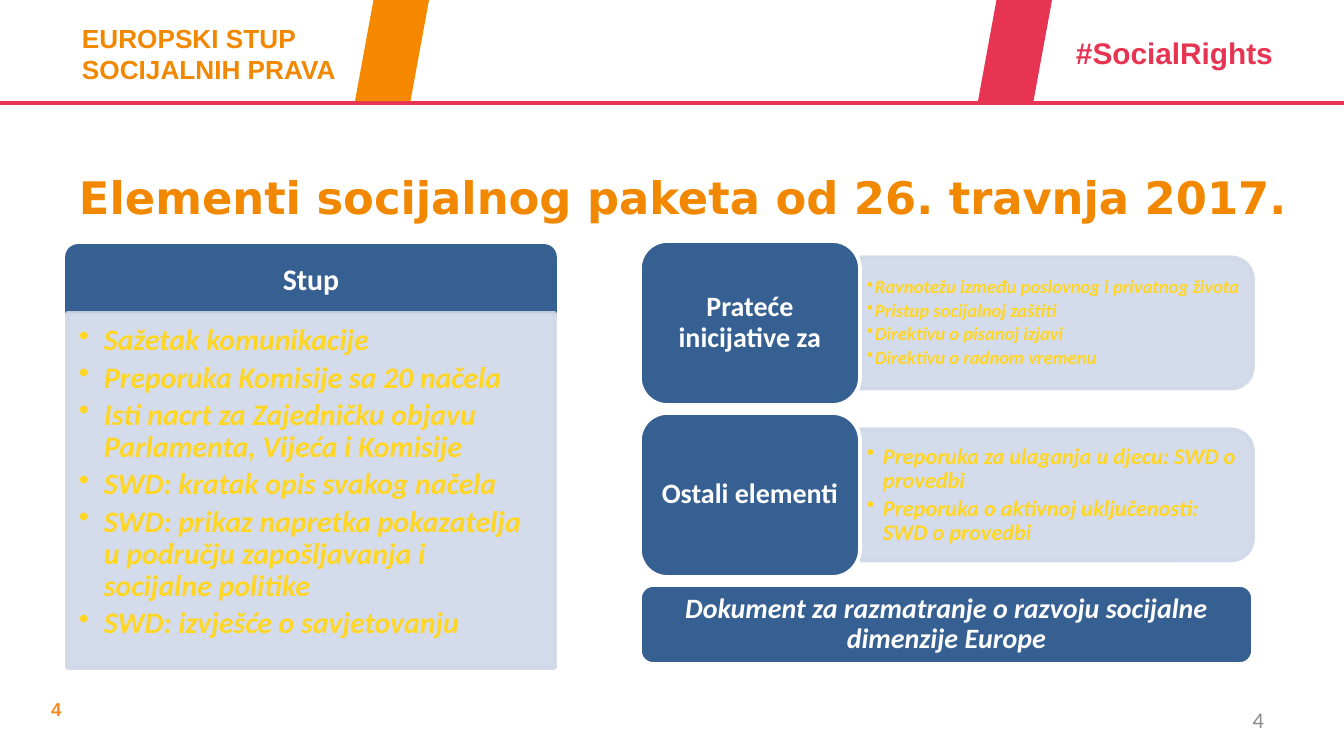
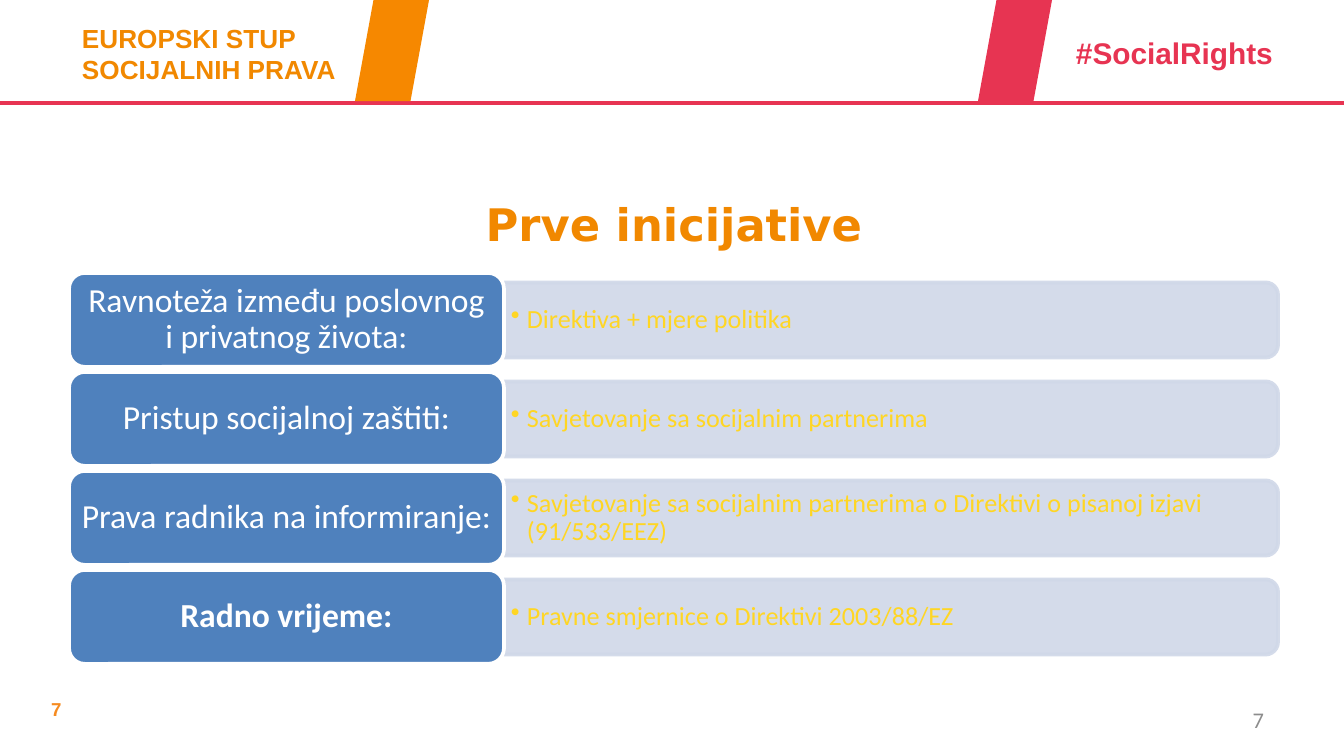
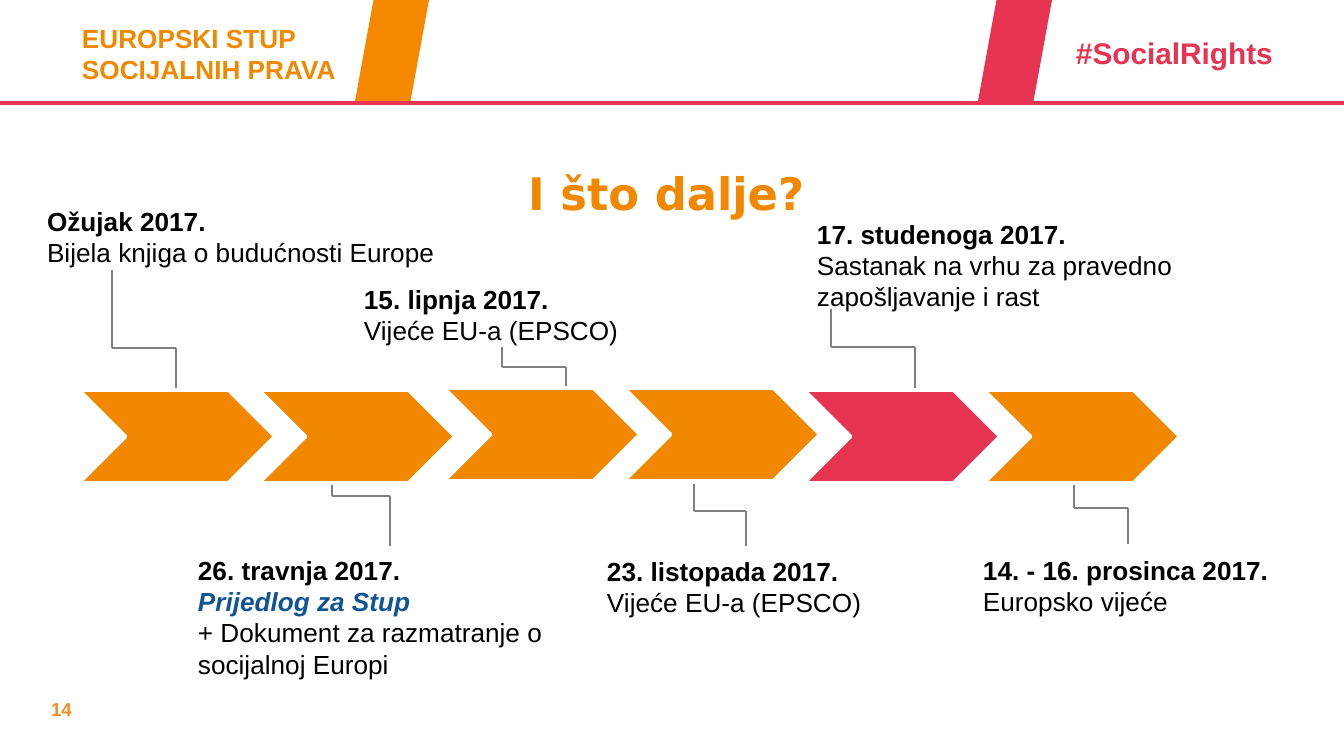
"""Builds three slides on the social package, its first initiatives and the timeline ahead."""
from itertools import pairwise

from lxml.etree import SubElement
from pptx import Presentation
from pptx.dml.color import RGBColor
from pptx.enum.shapes import MSO_CONNECTOR, MSO_SHAPE
from pptx.enum.text import MSO_ANCHOR, PP_ALIGN
from pptx.oxml.ns import qn
from pptx.util import Emu, Pt

PX = 914400 / 134.4
ORANGE, BAND_ORANGE, RED = "F18800", "F68800", "E73452"
NAVY, BLUE, PANEL, YELLOW = "376092", "4F81BD", "D0D8E8", "FFD624"
WHITE, BLACK, GREY = "FFFFFF", "000000", "808080"

HEADER_TEXTS = [
    ("EUROPSKI STUP\vSOCIJALNIH PRAVA", (69, 15, 341, 77), 14, ORANGE),
    ("#SocialRights", (1063, 28, 233, 50), 16, RED),
]
HEADER_BANDS = [(355, BAND_ORANGE), (978, RED)]

PILLAR_TITLE = "Stup"
PILLAR_ITEMS = [
    "Sažetak komunikacije",
    "Preporuka Komisije sa 20 načela",
    "Isti nacrt za Zajedničku objavu Parlamenta, Vijeća i Komisije",
    "SWD: kratak opis svakog načela",
    "SWD: prikaz napretka pokazatelja u području zapošljavanja i socijalne politike",
    "SWD: izvješće o savjetovanju",
]
PACKAGE_ROWS = [
    ("Prateće inicijative za", 10, 8, [
        "Ravnotežu između poslovnog i privatnog života",
        "Pristup socijalnoj zaštiti",
        "Direktivu o pisanoj izjavi",
        "Direktivu o radnom vremenu",
    ]),
    ("Ostali elementi", 12, 16, [
        "Preporuka za ulaganja u djecu: SWD o provedbi",
        "Preporuka o aktivnoj uključenosti: SWD o provedbi",
    ]),
]
REFLECTION_PAPER = "Dokument za razmatranje o razvoju socijalne dimenzije Europe"

INITIATIVES = [
    ("Ravnoteža između poslovnog i privatnog života:", "Direktiva + mjere politika", False),
    ("Pristup socijalnoj zaštiti:", "Savjetovanje sa socijalnim partnerima", False),
    ("Prava radnika na informiranje:",
     "Savjetovanje sa socijalnim partnerima o Direktivi o pisanoj izjavi (91/533/EEZ)", False),
    ("Radno vrijeme:", "Pravne smjernice o Direktivi 2003/88/EZ", True),
]

PROPOSAL = "Prijedlog za Stup"
MILESTONES = [
    (["Ožujak 2017.", "Bijela knjiga o budućnosti Europe"],
     (34, 198, 448, 77), (112, 270, 348, 176, 401)),
    (["26. travnja 2017.", PROPOSAL, "+ Dokument za razmatranje o socijalnoj Europi"],
     (185, 547, 418, 140), (332, 464, 496, 390, 546)),
    (["15. lipnja 2017.", "Vijeće EU-a (EPSCO)"],
     (351, 276, 349, 77), (502, 347, 367, 566, 421)),
    (["23. listopada 2017.", "Vijeće EU-a (EPSCO)"],
     (594, 548, 349, 77), (694, 484, 511, 746, 546)),
    (["17. studenoga 2017.", "Sastanak na vrhu za pravedno zapošljavanje i rast"],
     (804, 211, 496, 77), (831, 309, 347, 915, 401)),
    (["14. - 16. prosinca 2017.", "Europsko vijeće"],
     (970, 547, 374, 77), (1074, 481, 508, 1128, 544)),
]
CHEVRON_PAIRS = [
    (79, 390, [ORANGE, ORANGE]),
    (444, 388, [ORANGE, ORANGE]),
    (804, 390, [RED, ORANGE]),
]


def px(value):
    return Emu(round(value * PX))


def box_emu(box):
    return [px(value) for value in box]


def rgb(code):
    return RGBColor.from_string(code)


def style(paragraph, size, color, font="Calibri", bold=False, italic=False):
    for run in paragraph.runs:
        run.font.name, run.font.size = font, Pt(size)
        run.font.bold, run.font.italic = bold, italic
        run.font.color.rgb = rgb(color)


def write(shape, lines, size, color, align=PP_ALIGN.LEFT, anchor=MSO_ANCHOR.TOP,
          insets=(13, 7, 13, 7), **look):
    frame = shape.text_frame
    frame.text = "\n".join(lines)
    frame.word_wrap, frame.vertical_anchor = True, anchor
    frame.margin_left, frame.margin_top, frame.margin_right, frame.margin_bottom = box_emu(insets)
    for paragraph in frame.paragraphs:
        paragraph.alignment = align
        style(paragraph, size, color, **look)
    return frame.paragraphs


def write_bullets(shape, lines, size, indent, **options):
    for paragraph in write(shape, lines, size, YELLOW, **options):
        paragraph.line_spacing, paragraph.space_after = 0.9, Pt(size * 0.17)
        properties = paragraph._p.get_or_add_pPr()
        properties.set("marL", str(px(indent)))
        properties.set("indent", str(px(-indent)))
        SubElement(properties, qn("a:buChar")).set("char", "•")


def add_text(slide, box, lines, size, color, **options):
    return write(slide.shapes.add_textbox(*box_emu(box)), lines, size, color, **options)


def add_block(slide, kind, box, fill, line=None):
    shape = slide.shapes.add_shape(kind, *box_emu(box))
    shape.shadow.inherit = False
    shape.fill.solid()
    shape.fill.fore_color.rgb = rgb(fill)
    if line:
        shape.line.color.rgb, shape.line.width = rgb(line), Pt(2)
    else:
        shape.line.fill.background()
    return shape


def add_label(slide, kind, box, text, size, fill, line=WHITE, **look):
    label = add_block(slide, kind, box, fill, line)
    paragraphs = write(label, [text], size, WHITE, PP_ALIGN.CENTER, MSO_ANCHOR.MIDDLE,
                       (8, 4, 8, 4), **look)
    paragraphs[0].line_spacing = 0.9


def add_panel(slide, kind, box):
    panel = add_block(slide, kind, box, PANEL, PANEL)
    for color in list(panel._element.spPr.iter(qn("a:srgbClr"))):
        SubElement(color, qn("a:alpha")).set("val", "90000")
    return panel


def add_side_panel(slide, box):
    left, top, width, height = box
    turned = (left + (width - height) / 2, top + (height - width) / 2, height, width)
    add_panel(slide, MSO_SHAPE.ROUND_2_SAME_RECTANGLE, turned).rotation = 90


def add_row(slide, label_box, panel_width, label, label_look, items, size, indent, **look):
    left, top, width, height = label_box
    panel_box = (left + width, top + height * 0.1, panel_width, height * 0.8)
    add_side_panel(slide, panel_box)
    write_bullets(slide.shapes.add_textbox(*box_emu(panel_box)), items, size, indent,
                  anchor=MSO_ANCHOR.MIDDLE, insets=(7, 4, 11, 4), **look)
    add_label(slide, MSO_SHAPE.ROUNDED_RECTANGLE, label_box, label, **label_look)


def add_line(slide, start, end, color, width):
    line = slide.shapes.add_connector(MSO_CONNECTOR.STRAIGHT, *box_emu(start + end))
    line.line.color.rgb, line.line.width = rgb(color), Pt(width)
    SubElement(line._element.spPr, qn("a:effectLst"))


def add_slide(presentation, title, title_box, number, corner_number=True):
    slide = presentation.slides.add_slide(presentation.slide_layouts[5])
    heading = slide.shapes.title
    heading.left, heading.top, heading.width, heading.height = box_emu(title_box)
    write(heading, [title], 24, ORANGE, PP_ALIGN.CENTER, MSO_ANCHOR.MIDDLE,
          font="DejaVu Sans", bold=True)
    add_line(slide, (0, 103), (1344, 103), RED, 2.25)
    for text, box, size, color in HEADER_TEXTS:
        add_text(slide, box, [text], size, color, font="Arial", bold=True)
    for left, color in HEADER_BANDS:
        add_block(slide, MSO_SHAPE.PARALLELOGRAM, (left, 0, 74, 101), color)
    add_text(slide, (38, 691, 293, 36), [number], 10, "F68B20", font="Arial", bold=True)
    if corner_number:
        add_text(slide, (964, 700, 313, 40), [number], 12, "8C8C8C",
                 align=PP_ALIGN.RIGHT, anchor=MSO_ANCHOR.MIDDLE)
    return slide


def build_package(presentation):
    slide = add_slide(presentation, "Elementi socijalnog paketa od 26. travnja 2017.",
                      (22, 145, 1322, 104), "4")
    add_label(slide, MSO_SHAPE.ROUND_2_SAME_RECTANGLE, (67, 246, 488, 67), PILLAR_TITLE,
              16, NAVY, NAVY, bold=True)
    pillar = add_panel(slide, MSO_SHAPE.RECTANGLE, (67, 313, 488, 355))
    write_bullets(pillar, PILLAR_ITEMS, 16, 25, insets=(12, 12, 16, 19), bold=True, italic=True)
    label_look = {"size": 15, "fill": NAVY, "bold": True}
    for index, (label, size, indent, items) in enumerate(PACKAGE_ROWS):
        add_row(slide, (640, 241 + 172 * index, 220, 164), 393, label, label_look,
                items, size, indent, bold=True, italic=True)
    add_label(slide, MSO_SHAPE.ROUNDED_RECTANGLE, (640, 585, 613, 79), REFLECTION_PAPER,
              italic=True, **label_look)


def build_initiatives(presentation):
    slide = add_slide(presentation, "Prve inicijative", (69, 172, 1210, 104), "7")
    for index, (label, action, bold) in enumerate(INITIATIVES):
        label_look = {"size": 18, "fill": BLUE, "bold": bold}
        add_row(slide, (69, 273 + 99 * index, 435, 94), 774, label, label_look,
                [action], 14, 16)


def build_timeline(presentation):
    slide = add_slide(presentation, "I što dalje? ", (69, 145, 1210, 96), "14", False)
    for lines, box, (start_x, start_y, bend_y, end_x, end_y) in MILESTONES:
        corners = [(start_x, start_y), (start_x, bend_y), (end_x, bend_y), (end_x, end_y)]
        for start, end in pairwise(corners):
            add_line(slide, start, end, GREY, 0.75)
        date, *details = add_text(slide, box, lines, 14, BLACK, font="Arial")
        style(date, 14, BLACK, "Arial", bold=True)
        for paragraph in details:
            if paragraph.text == PROPOSAL:
                style(paragraph, 14, "0F5494", "Arial", bold=True, italic=True)
    for left, top, colors in CHEVRON_PAIRS:
        for index, color in enumerate(colors):
            add_block(slide, MSO_SHAPE.CHEVRON, (left + 180 * index, top, 196, 93), color, WHITE)


def main():
    presentation = Presentation()
    presentation.slide_width, presentation.slide_height = px(1344), px(756)
    build_package(presentation)
    build_initiatives(presentation)
    build_timeline(presentation)
    presentation.save("out.pptx")


if __name__ == "__main__":
    main()
